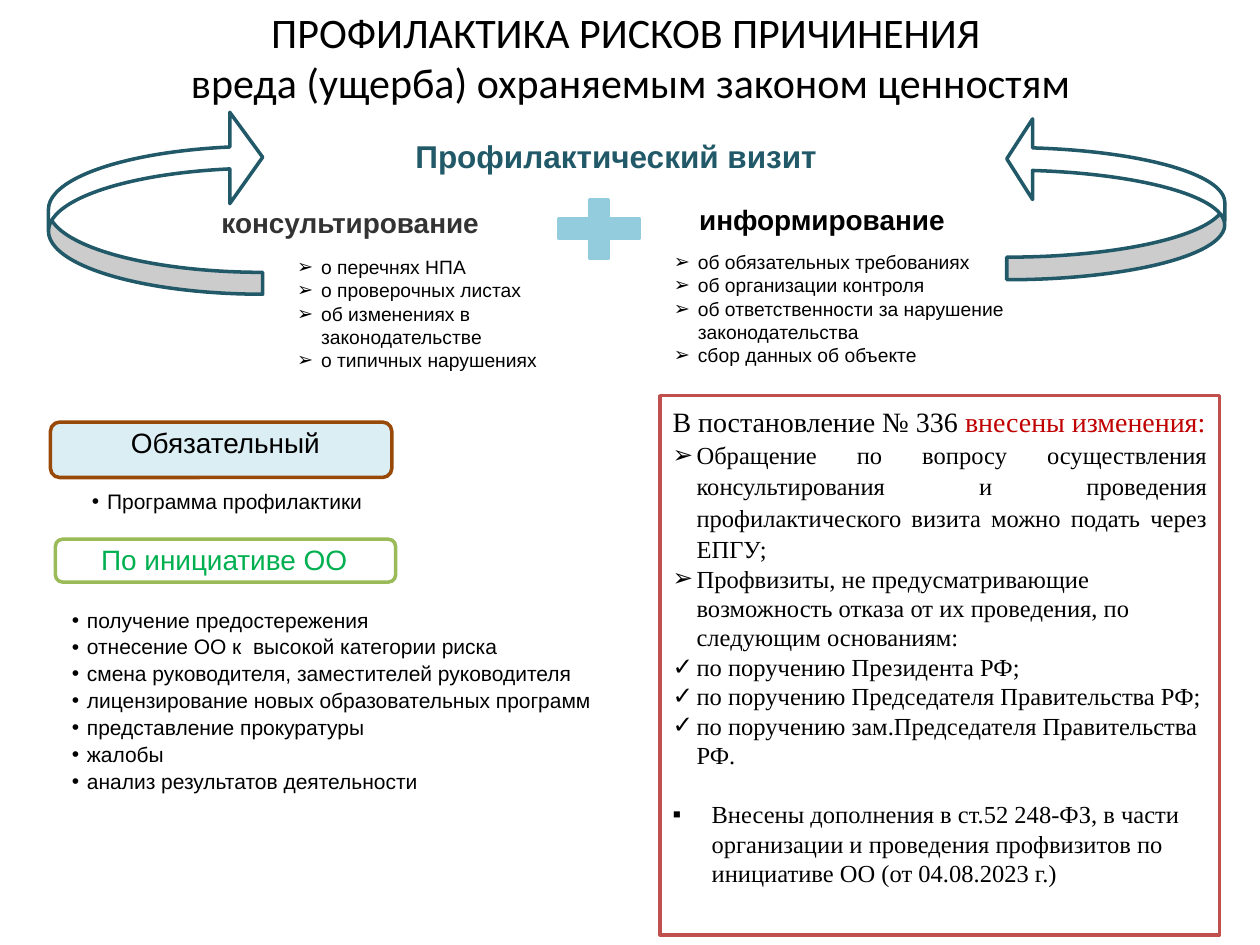
"""Build a slide on preventing risks of harm to legally protected values."""
import lxml.etree
import pptx
import pptx.dml.color
import pptx.enum.shapes
import pptx.enum.text
import pptx.oxml.ns
import pptx.util

Inches = pptx.util.Inches
Pt = pptx.util.Pt
Shape = pptx.enum.shapes.MSO_SHAPE
Anchor = pptx.enum.text.MSO_ANCHOR
Align = pptx.enum.text.PP_ALIGN


def colour(code):
    return pptx.dml.color.RGBColor.from_string(code)


def write(text, frame, size=12, font="Arial", code="000000", bold=False, align=Align.LEFT,
          bullet=None, indent=0.19, spacing=None, before=0, after=0):
    first = frame.paragraphs[0]
    para = frame.add_paragraph() if first.runs else first
    para.alignment = align
    para.line_spacing = spacing
    para.space_before = Pt(before)
    para.space_after = Pt(after)
    if bullet:
        properties = para._p.get_or_add_pPr()
        properties.set("marL", str(Inches(indent)))
        properties.set("indent", str(-Inches(indent)))
        for tag, key, value in (("a:buFont", "typeface", "Arial"), ("a:buChar", "char", bullet)):
            lxml.etree.SubElement(properties, pptx.oxml.ns.qn(tag)).set(key, value)
    span = para.add_run()
    span.text = text
    span.font.size = Pt(size)
    span.font.name = font
    span.font.bold = bold
    span.font.color.rgb = colour(code)
    return para


deck = pptx.Presentation()
deck.slide_width = Inches(10)
deck.slide_height = Inches(7.5)
page = deck.slides.add_slide(deck.slide_layouts[6])

shapes = {
    "mandatory": (Shape.ROUNDED_RECTANGLE, (0.4, 3.35, 2.71, 0.44), "DBEEF4", "984807", 0, ()),
    "initiative": (Shape.ROUNDED_RECTANGLE, (0.44, 4.28, 2.7, 0.34), "FFFFFF", "9BBB59", 0, ()),
    "right arrow": (Shape.CURVED_RIGHT_ARROW, (7.99, 0.94, 1.73, 1.28), "FFFFFF", "215968", 180,
                    (0.14, 0.5, 0.16)),
    "left arrow": (Shape.CURVED_DOWN_ARROW, (0.51, 0.76, 1.45, 1.7), "FFFFFF", "215968", 270,
                   (0.12, 0.5, 0.18)),
    "plus": (Shape.MATH_PLUS, (4.32, 1.5, 0.87, 0.63), "93CDDD", "93CDDD", 0, (0.24,)),
    "changes": (Shape.RECTANGLE, (5.24, 3.14, 4.44, 4.28), "FFFFFF", "C0504D", 0, ()),
}
frames = {}
for name, (kind, place, fill, line, turn, adjustments) in shapes.items():
    shape = page.shapes.add_shape(kind, *map(Inches, place))
    shape.shadow.inherit = False
    shape.rotation = turn
    shape.fill.solid()
    shape.fill.fore_color.rgb = colour(fill)
    shape.line.color.rgb = colour(line)
    shape.line.width = Pt(2)
    for index, value in enumerate(adjustments):
        shape.adjustments[index] = value
    frames[name] = shape.text_frame

text_boxes = {
    "title": ((0.17, 0.05, 9.67, 0.8), (0.1, 0.05)),
    "visit": ((1.23, 0.98, 7.32, 0.52), (0.1, 0.05)),
    "mandatory label": ((0.53, 3.33, 2.58, 0.37), (0.1, 0.05)),
    "initiative label": ((0.45, 4.3, 2.66, 0.31), (0.07, 0.07)),
    "programme": ((0.56, 3.88, 5.12, 0.19), (0.17, 0.02)),
    "grounds": ((0.4, 4.82, 5.43, 1.5), (0.17, 0.02)),
    "informing": ((5.45, 1.56, 2.18, 0.37), (0.1, 0.05)),
    "consulting": ((1.66, 1.58, 2.3, 0.37), (0.1, 0.05)),
    "informing topics": ((5.25, 1.94, 2.85, 1.03), (0.1, 0.05)),
    "consulting topics": ((2.26, 1.98, 2.33, 1.03), (0.1, 0.05)),
}
for name, (place, (side, top)) in text_boxes.items():
    box = page.shapes.add_textbox(*map(Inches, place))
    frame = box.text_frame
    frame.word_wrap = name not in ("title", "informing", "consulting")
    frame.margin_left = Inches(side)
    frame.margin_right = Inches(min(side, 0.1))
    frame.margin_top = frame.margin_bottom = Inches(top)
    frames[name] = frame

for name in ("title", "visit", "initiative label"):
    frames[name].vertical_anchor = Anchor.MIDDLE
frames["changes"].vertical_anchor = Anchor.TOP

for text in ("ПРОФИЛАКТИКА РИСКОВ ПРИЧИНЕНИЯ ", "вреда (ущерба) охраняемым законом ценностям"):
    write(text, frames["title"], size=24, font="Calibri", align=Align.CENTER)
write("Профилактический визит", frames["visit"], size=18, code="215968", bold=True,
      align=Align.CENTER)
write("консультирование", frames["consulting"], size=16, code="333333", bold=True)
write("информирование", frames["informing"], size=16, bold=True)
write("Обязательный ", frames["mandatory label"], size=16, align=Align.CENTER)
write("По инициативе ОО", frames["initiative label"], size=16, code="00B050",
      align=Align.CENTER, spacing=0.9)

topics = {
    "consulting topics": ("о перечнях НПА", "о проверочных листах",
                          "об изменениях в законодательстве", "о типичных нарушениях"),
    "informing topics": ("об обязательных требованиях", "об организации контроля",
                         "об ответственности за нарушение законодательства",
                         "сбор данных об объекте"),
}
for name, lines in topics.items():
    for text in lines:
        write(text, frames[name], size=11, bullet="➢")

reasons = {
    "programme": ("Программа профилактики",),
    "grounds": ("получение предостережения", "отнесение ОО к  высокой категории риска",
                "смена руководителя, заместителей руководителя",
                "лицензирование новых образовательных программ",
                "представление прокуратуры", "жалобы", "анализ результатов деятельности"),
}
for name, lines in reasons.items():
    for text in lines:
        write(text, frames[name], bullet="•", indent=0.12, spacing=0.9, after=2.4)

changes = frames["changes"]
serif = "Times New Roman"
heading = write("В постановление № 336 ", changes, size=16, font=serif,
                align=Align.JUSTIFY, spacing=1.07)
accent = heading.add_run()
accent.text = "внесены изменения:"
accent.font.size = Pt(16)
accent.font.name = serif
accent.font.color.rgb = colour("C00000")
write("Обращение по вопросу осуществления консультирования и проведения "
      "профилактического визита можно подать через ЕПГУ;", changes, size=14, font=serif,
      align=Align.JUSTIFY, bullet="➢", spacing=1.07)
for bullet, text in (
    ("➢", "Профвизиты, не предусматривающие возможность отказа от их проведения, "
          "по следующим основаниям:"),
    ("✓", "по поручению Президента РФ;"),
    ("✓", "по поручению Председателя Правительства РФ;"),
    ("✓", "по поручению зам.Председателя Правительства РФ."),
):
    write(text, changes, size=14, font=serif, bullet=bullet)
write("Внесены дополнения в ст.52 248-ФЗ, в части организации и проведения профвизитов "
      "по инициативе ОО (от 04.08.2023 г.)", changes, size=14, font=serif,
      bullet="▪", indent=0.31, before=17)

deck.save("out.pptx")
